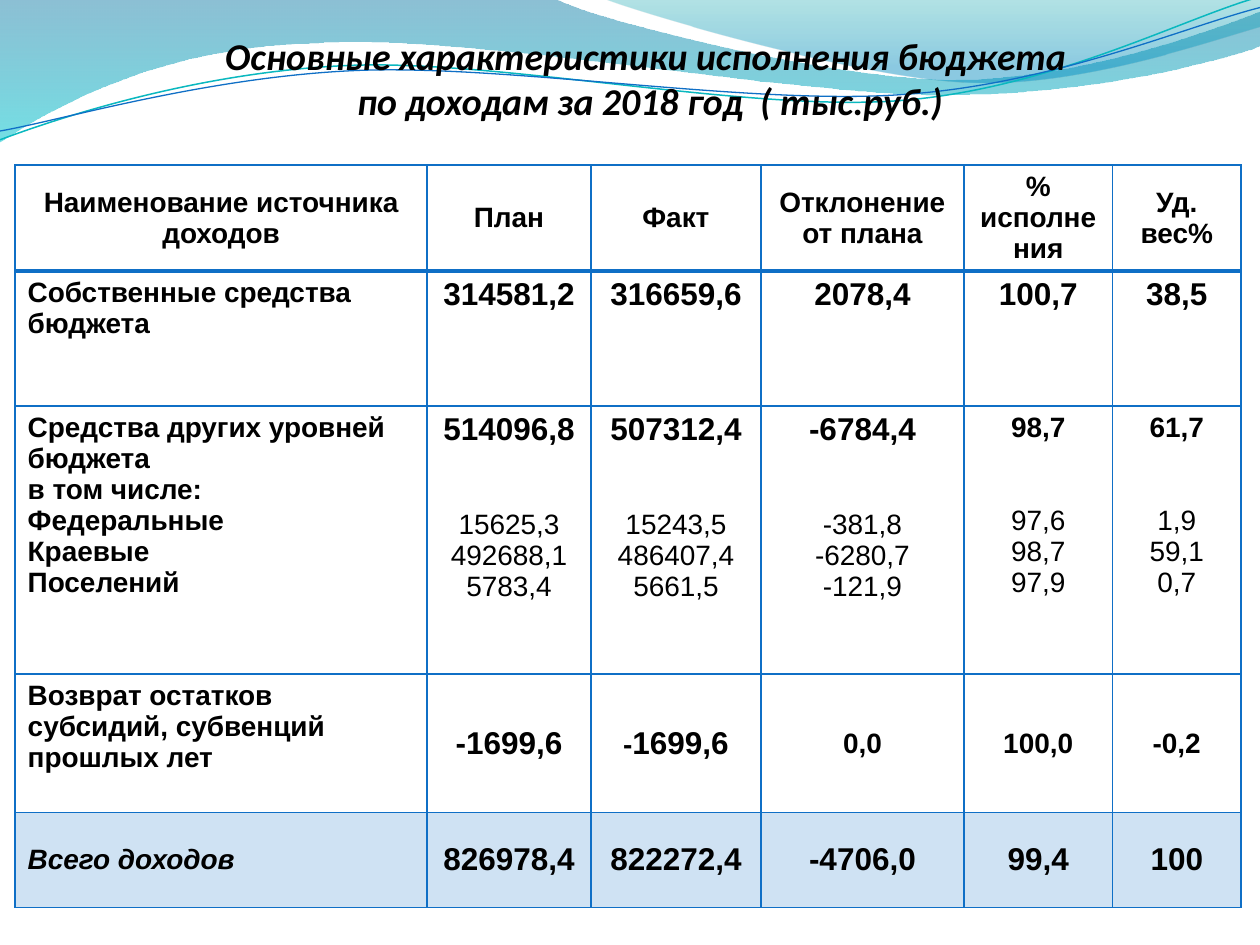
from lxml import etree
from pptx import Presentation
from pptx.dml.color import RGBColor
from pptx.enum.text import MSO_ANCHOR as Anchor, MSO_AUTO_SIZE as AutoSize, PP_ALIGN as Align
from pptx.oxml.ns import qn
from pptx.util import Inches, Pt

COLORS = {"blue": "0F6FC6", "cyan": "0AB8BF", "wave_top": "0074A1", "wave_bottom": "00C6CF",
          "corner_top": "00A1A9", "corner_bottom": "008BBF", "text": "000000"}

# Waves: a start point, then lines (one point) and curves (three points)
LEFT_WAVE = [(0, 0), [(4.4, -0.01)],
             [(4.76, 0.17), (6.64, 0.63), (7.58, 0.63)],
             [(8.53, 0.63), (9.58, 0.26), (10, 0.09)], [(10.01, 0.36)],
             [(9.83, 0.44), (8.7, 0.76), (7.46, 0.75)],
             [(6.22, 0.75), (3.82, 0.28), (2.57, 0.34)],
             [(1.29, 0.36), (0.46, 0.83), (-0.01, 1.13)]]
RIGHT_WAVE = [(4.79, -0.01), [(5.09, 0.11), (6.82, 0.62), (7.69, 0.65)],
              [(8.56, 0.69), (9.61, 0.32), (10, 0.21)], [(10, 0)]]
CYAN_CURVE = [(0, 1.11), [(0.48, 0.93), (1.58, 0.57), (2.77, 0.52)],
              [(3.95, 0.47), (5.93, 0.89), (7.13, 0.8)],
              [(8.33, 0.71), (9.38, 0.15), (9.98, -0.02)]]
BLUE_CURVE = [(0, 1.04), [(0.47, 0.96), (1.64, 0.61), (2.83, 0.56)],
              [(4.03, 0.51), (5.97, 0.84), (7.17, 0.75)],
              [(8.36, 0.67), (9.41, 0.21), (10, 0.06)]]

COLUMN_WIDTHS = [3.27, 1.3, 1.35, 1.61, 1.18, 1.02]
ROW_HEIGHTS = [0.79, 1.07, 2.13, 1.1, 0.75]
TITLE_LINES = ["Основные характеристики исполнения бюджета ",
               "по доходам за 2018 год  ( тыс.руб.)"]
HEADERS = ["Наименование источника доходов", "План", "Факт", "Отклонение от плана",
           "%\nисполнения", "Уд. вес%"]
OWN_FUNDS = ["Собственные средства бюджета", "314581,2", "316659,6", "2078,4", "100,7", "38,5"]
OTHER_LEVELS = ["Средства других уровней бюджета\nв том числе:\nФедеральные\nКраевые\nПоселений",
                "514096,8", "507312,4", "-6784,4", "98,7", "61,7"]
OTHER_LEVELS_DETAIL = ["", "15625,3\n492688,1\n5783,4", "15243,5\n486407,4\n5661,5",
                       "-381,8\n-6280,7\n-121,9", "97,6\n98,7\n97,9", "1,9\n59,1\n0,7"]
RETURNS = ["Возврат остатков субсидий, субвенций прошлых лет", "-1699,6", "-", "0,0", "100,0", "-0,2"]
TOTAL = ["Всего доходов", "826978,4", "822272,4", "-4706,0", "99,4", "100"]
# Row texts, sizes by column, anchor
TABLE_ROWS = [(HEADERS, [16] * 6, Anchor.MIDDLE),
              (OWN_FUNDS, [16] + [18] * 5, Anchor.TOP),
              (OTHER_LEVELS, [16, 18, 18, 18, 16, 16], Anchor.TOP),
              (RETURNS, [16, 18, 16, 16, 16, 16], Anchor.MIDDLE),
              (TOTAL, [16] + [18] * 5, Anchor.MIDDLE)]
DETAIL_ROW, RETURNS_ROW, TOTAL_ROW = 2, 3, 4
FACT_COLUMN = 2


def rgb(name):
    return RGBColor.from_string(COLORS[name])


def set_opacity(container, percent):
    for color in container.iter(qn("a:srgbClr")):
        etree.SubElement(color, qn("a:alpha")).set("val", str(percent * 1000))


def add_run(paragraph, text, size=16, font="Arial", bold=True, italic=False):
    run = paragraph.add_run()
    run.text = text
    run.font.size = Pt(size)
    run.font.name = font
    run.font.bold = bold
    run.font.italic = italic
    run.font.color.rgb = rgb("text")


def write_text(frame, text, align=Align.CENTER, space_before=0, append=False, **font):
    """Write one paragraph per line; space_before sets off the first one."""
    for index, line in enumerate(text.split("\n")):
        paragraph = frame.add_paragraph() if append or index else frame.paragraphs[0]
        paragraph.alignment = align
        if space_before and not index:
            paragraph.space_before = Pt(space_before)
        add_run(paragraph, line, **font)


def add_path(slide, path, close):
    """Build the outline through its end points, then bend the curved segments."""
    ends = [path[0]] + [segment[-1] for segment in path[1:]]
    ends = [(Inches(x), Inches(y)) for x, y in ends]
    builder = slide.shapes.build_freeform(*ends[0])
    builder.add_line_segments(ends[1:], close=close)
    shape = builder.convert_to_shape()
    shape.shadow.inherit = False
    lines = list(shape.element.iter(qn("a:lnTo")))
    for line, segment in zip(lines, path[1:]):
        if len(segment) == 3:
            curve = etree.Element(qn("a:cubicBezTo"))
            for x, y in segment:
                etree.SubElement(curve, qn("a:pt"), x=str(Inches(x) - shape.left),
                                 y=str(Inches(y) - shape.top))
            line.getparent().replace(line, curve)
    return shape


def add_wave(slide, path, stops):
    shape = add_path(slide, path, close=True)
    shape.line.fill.background()
    shape.fill.gradient()
    shape.fill.gradient_angle = 270
    for stop, (position, color, _) in zip(shape.fill.gradient_stops, stops):
        stop.position = position
        stop.color.rgb = rgb(color)
    gradient = shape.element.spPr.find(qn("a:gradFill"))
    for element, (_, _, opacity) in zip(gradient.iter(qn("a:gs")), stops):
        set_opacity(element, opacity)


def add_curve(slide, path, color, width):
    shape = add_path(slide, path, close=False)
    shape.fill.background()
    shape.line.color.rgb = rgb(color)
    shape.line.width = Pt(width)


def set_borders(cell, **widths):
    properties = cell._tc.get_or_add_tcPr()
    for index, side in enumerate(("L", "R", "T", "B")):
        line = etree.Element(qn(f"a:ln{side}"), w=str(Pt(widths.get(side, 1))))
        fill = etree.SubElement(line, qn("a:solidFill"))
        etree.SubElement(fill, qn("a:srgbClr"), val=COLORS["blue"])
        properties.insert(index, line)


def format_cell(cell, row):
    if row == TOTAL_ROW:
        cell.fill.solid()
        cell.fill.fore_color.rgb = rgb("blue")
        set_opacity(cell._tc.tcPr.find(qn("a:solidFill")), 20)
    else:
        cell.fill.background()
    set_borders(cell, T=2 if row == 1 else 1, B=2 if row == 0 else 1)


def add_budget_table(slide):
    table = slide.shapes.add_table(len(ROW_HEIGHTS), len(COLUMN_WIDTHS), Inches(0.12), Inches(1.31),
                                   Inches(sum(COLUMN_WIDTHS)), Inches(sum(ROW_HEIGHTS))).table
    table.first_row = table.horz_banding = False
    for column, width in zip(table.columns, COLUMN_WIDTHS):
        column.width = Inches(width)
    for row, height in zip(table.rows, ROW_HEIGHTS):
        row.height = Inches(height)
    for row, (texts, sizes, anchor) in enumerate(TABLE_ROWS):
        for column, (text, size) in enumerate(zip(texts, sizes)):
            cell = table.cell(row, column)
            is_label = row > 0 and column == 0
            cell.vertical_anchor = Anchor.TOP if is_label and row != TOTAL_ROW else anchor
            write_text(cell.text_frame, text, size=size,
                       align=Align.LEFT if is_label else Align.CENTER,
                       italic=is_label and row == TOTAL_ROW)
            if row == DETAIL_ROW and column:
                write_text(cell.text_frame, OTHER_LEVELS_DETAIL[column], append=True,
                           space_before=35.5, bold=False)
            format_cell(cell, row)
    add_run(table.cell(RETURNS_ROW, FACT_COLUMN).text_frame.paragraphs[0], "1699,6", size=18)


def format_title(slide, lines):
    title = slide.shapes.title
    title.left, title.top, title.width, title.height = map(Inches, (0.67, 0, 8.98, 0.98))
    frame = title.text_frame
    frame.word_wrap = True
    frame.auto_size = AutoSize.NONE
    frame.vertical_anchor = Anchor.BOTTOM
    frame.margin_left = frame.margin_right = frame.margin_bottom = 0
    frame.margin_top = Inches(0.05)
    paragraph = frame.paragraphs[0]
    paragraph.alignment = Align.CENTER
    for index, line in enumerate(lines):
        if index:
            paragraph.add_line_break()
        add_run(paragraph, line, size=21.6, font="Calibri", italic=True)
    title.element.getparent().append(title.element)  # bring in front of the waves


def main():
    presentation = Presentation()
    presentation.slide_width, presentation.slide_height = Inches(10), Inches(7.5)
    slide = presentation.slides.add_slide(presentation.slide_layouts[5])
    add_wave(slide, LEFT_WAVE, [(0, "wave_top", 45), (1, "wave_bottom", 55)])
    add_wave(slide, RIGHT_WAVE, [(0, "corner_top", 30), (0.8, "corner_bottom", 45)])
    add_curve(slide, CYAN_CURVE, "cyan", 0.85)
    add_curve(slide, BLUE_CURVE, "blue", 0.75)
    add_budget_table(slide)
    format_title(slide, TITLE_LINES)
    presentation.save("out.pptx")


if __name__ == "__main__":
    main()
